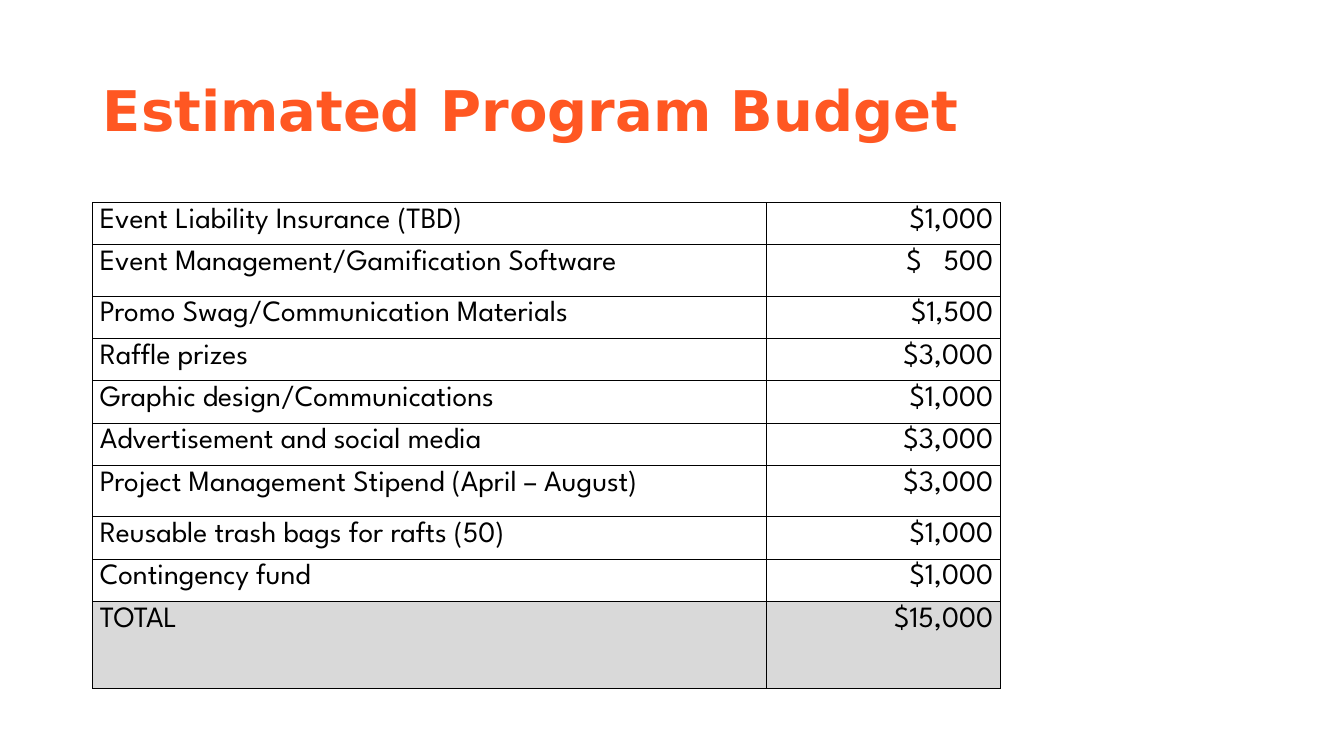
from lxml import etree
from pptx import Presentation
from pptx import util as u
from pptx.dml.color import RGBColor
from pptx.enum import text
from pptx.oxml.ns import qn

COLORS = {"title": "FF5722", "ink": "000000", "paper": "FFFFFF", "total": "D9D9D9"}
TITLE_FONT = {"name": "DejaVu Sans", "size": u.Pt(40), "bold": True}
TABLE_FONT = {"name": "League Spartan", "size": u.Pt(21), "bold": False}
CELL_FORMAT = {
    "margin_left": u.Inches(0.07), "margin_right": u.Inches(0.07),
    "margin_top": u.Inches(0.05), "margin_bottom": u.Inches(0.05),
    "vertical_anchor": text.MSO_ANCHOR.TOP,
}
BUDGET = [
    ("Event Liability Insurance (TBD)", "$1,000"),
    ("Event Management/Gamification Software", "$   500"),
    ("Promo Swag/Communication Materials", "$1,500"),
    ("Raffle prizes", "$3,000"),
    ("Graphic design/Communications", "$1,000"),
    ("Advertisement and social media", "$3,000"),
    ("Project Management Stipend (April – August)", "$3,000"),
    ("Reusable trash bags for rafts (50)", "$1,000"),
    ("Contingency fund", "$1,000"),
    ("TOTAL", "$15,000"),
]
COLUMN_WIDTHS = (6.68, 2.32)
ROW_HEIGHT = 0.42
TALL_ROWS = {1: 0.51, 6: 0.51, 9: 0.86}


def apply(target, values):
    for name, value in values.items():
        setattr(target, name, value)


class SlideBuilder:
    def __init__(self, page):
        self.page = page

    def add_text(self, para, words, font, color, align):
        para.alignment = align
        span = para.add_run()
        span.text = words
        apply(span.font, font)
        span.font.color.rgb = RGBColor.from_string(COLORS[color])

    def title(self, words, left, top, width, height):
        box = self.page.shapes.title
        apply(box, {"left": u.Inches(left), "top": u.Inches(top),
                    "width": u.Inches(width), "height": u.Inches(height)})
        box.text_frame.vertical_anchor = text.MSO_ANCHOR.MIDDLE
        para = box.text_frame.paragraphs[0]
        para.line_spacing = 0.9
        self.add_text(para, words, TITLE_FONT, "title", text.PP_ALIGN.LEFT)

    def borders(self, cell):
        properties = cell._tc.get_or_add_tcPr()
        for index, side in enumerate(("a:lnL", "a:lnR", "a:lnT", "a:lnB")):
            line = etree.Element(qn(side), w=str(u.Pt(0.75)))
            fill = etree.SubElement(line, qn("a:solidFill"))
            etree.SubElement(fill, qn("a:srgbClr"), val=COLORS["ink"])
            properties.insert(index, line)

    def cell(self, cell, words, fill, align):
        apply(cell, CELL_FORMAT)
        cell.fill.solid()
        cell.fill.fore_color.rgb = RGBColor.from_string(COLORS[fill])
        self.borders(cell)
        self.add_text(cell.text_frame.paragraphs[0], words, TABLE_FONT, "ink", align)

    def table(self, rows, left, top):
        heights = [TALL_ROWS.get(i, ROW_HEIGHT) for i in range(len(rows))]
        grid = self.page.shapes.add_table(
            len(rows), len(COLUMN_WIDTHS), u.Inches(left), u.Inches(top),
            u.Inches(sum(COLUMN_WIDTHS)), u.Inches(sum(heights))).table
        apply(grid, {"first_row": False, "horz_banding": False})
        for column, width in zip(grid.columns, COLUMN_WIDTHS):
            column.width = u.Inches(width)
        aligns = (text.PP_ALIGN.LEFT, text.PP_ALIGN.RIGHT)
        for row, height, entry in zip(grid.rows, heights, rows):
            row.height = u.Inches(height)
            fill = "total" if entry[0] == "TOTAL" else "paper"
            for cell, words, align in zip(row.cells, entry, aligns):
                self.cell(cell, words, fill, align)


def main():
    deck = Presentation()
    apply(deck, {"slide_width": u.Inches(13.33), "slide_height": u.Inches(7.5)})
    builder = SlideBuilder(deck.slides.add_slide(deck.slide_layouts[5]))

    # Heading
    builder.title("Estimated Program Budget", 0.92, 0.4, 12.07, 1.45)

    # Budget items and total
    builder.table(BUDGET, 0.92, 2.01)

    deck.save("out.pptx")


if __name__ == "__main__":
    main()
